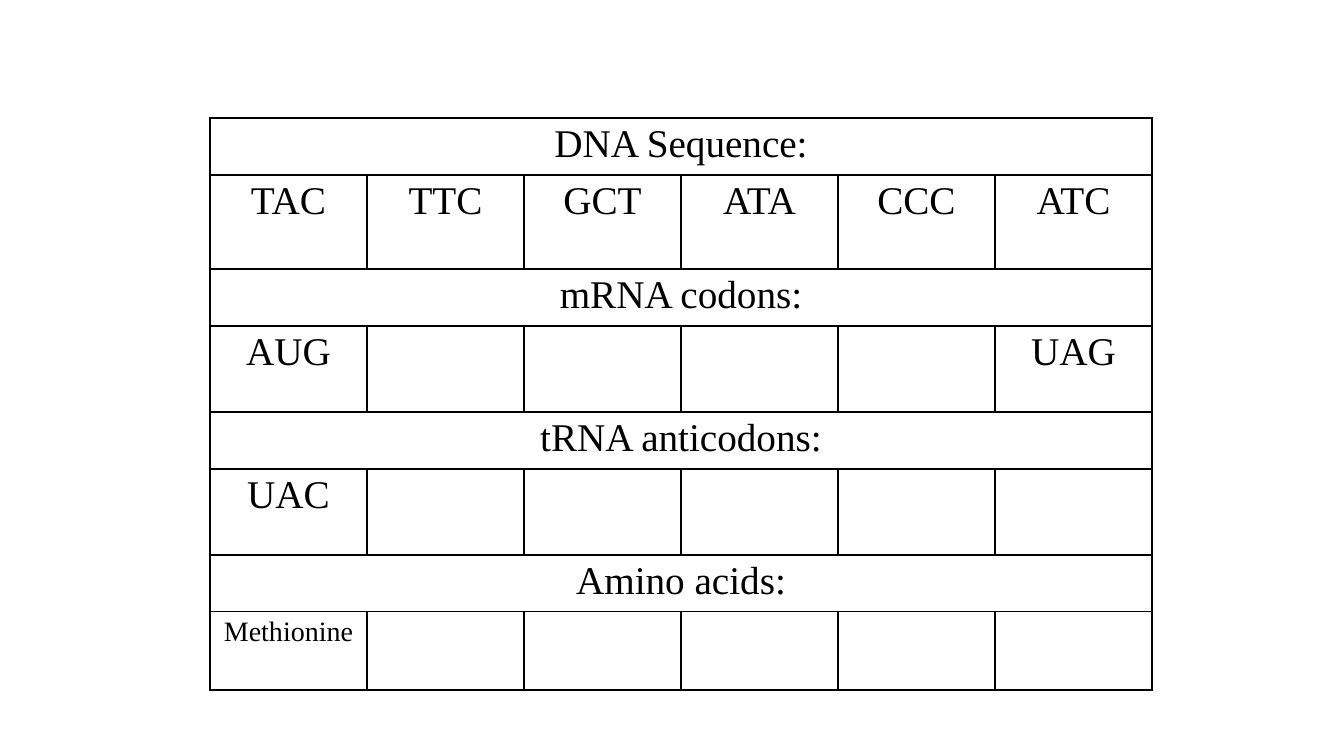
from lxml.etree import SubElement
from pptx import Presentation
from pptx.dml.color import RGBColor
from pptx.enum.text import PP_ALIGN
from pptx.oxml import parse_xml
from pptx.oxml.ns import nsdecls, qn
from pptx.util import Pt

EMU_PER_PX = 914400 / 100.8
BLACK = RGBColor(0, 0, 0)
WHITE = RGBColor(255, 255, 255)
FONT = "Times New Roman"
COLUMNS = 6
COLUMN_WIDTH = 157
HEADING_HEIGHT = 57
THIN, THICK = 1, 2.25

SECTIONS = [
    ("DNA Sequence:", 94, 28, ["TAC", "TTC", "GCT", "ATA", "CCC", "ATC"]),
    ("mRNA codons:", 86, 28, ["AUG", "", "", "", "", "UAG"]),
    ("tRNA anticodons:", 86, 28, ["UAC", "", "", "", "", ""]),
    ("Amino acids:", 78, 20, ["Methionine", "", "", "", "", ""]),
]


def px(length):
    return round(length * EMU_PER_PX)


def write_cell(cell, text, size):
    cell.fill.solid()
    cell.fill.fore_color.rgb = WHITE
    if not text:
        return
    para = cell.text_frame.paragraphs[0]
    para.text = text
    para.alignment = PP_ALIGN.CENTER
    properties = para._p.get_or_add_pPr()
    spacing = SubElement(properties, qn("a:spcBef"))
    SubElement(spacing, qn("a:spcPct"), val="20000")
    span = para.runs[0]
    span.font.name = FONT
    span.font.size = Pt(size)
    span.font.color.rgb = BLACK


def draw_borders(cell, left, right, top, bottom):
    properties = cell._tc.get_or_add_tcPr()
    sides = zip("LRTB", (left, right, top, bottom))
    for position, (side, outer) in enumerate(sides):
        width = Pt(THICK if outer else THIN)
        border = parse_xml(
            f'<a:ln{side} {nsdecls("a")} w="{width}"><a:solidFill>'
            f'<a:srgbClr val="{BLACK}"/></a:solidFill></a:ln{side}>'
        )
        properties.insert(position, border)


def add_codon_table(page, left, top):
    heights = [h for section in SECTIONS for h in (HEADING_HEIGHT, section[1])]
    frame = page.shapes.add_table(
        len(heights), COLUMNS, px(left), px(top),
        px(COLUMNS * COLUMN_WIDTH), px(sum(heights)),
    )
    table = frame.table
    table.first_row = False
    table.horz_banding = False
    for column in table.columns:
        column.width = px(COLUMN_WIDTH)
    for row, height in zip(table.rows, heights):
        row.height = px(height)

    for index, (heading, _, size, entries) in enumerate(SECTIONS):
        heading_row = 2 * index
        heading_cell = table.cell(heading_row, 0)
        heading_cell.merge(table.cell(heading_row, COLUMNS - 1))
        write_cell(heading_cell, heading, 28)
        for column, entry in enumerate(entries):
            write_cell(table.cell(heading_row + 1, column), entry, size)

    last_row = len(heights) - 1
    for row in range(len(heights)):
        for column in range(COLUMNS):
            cell = table.cell(row, column)
            reaches_right = cell.is_merge_origin or column == COLUMNS - 1
            draw_borders(cell, column == 0, reaches_right, row == 0, row == last_row)


def main():
    deck = Presentation()
    deck.slide_width = px(1344)
    deck.slide_height = px(756)
    page = deck.slides.add_slide(deck.slide_layouts[6])
    add_codon_table(page, 210, 118)
    deck.save("out.pptx")


if __name__ == "__main__":
    main()
